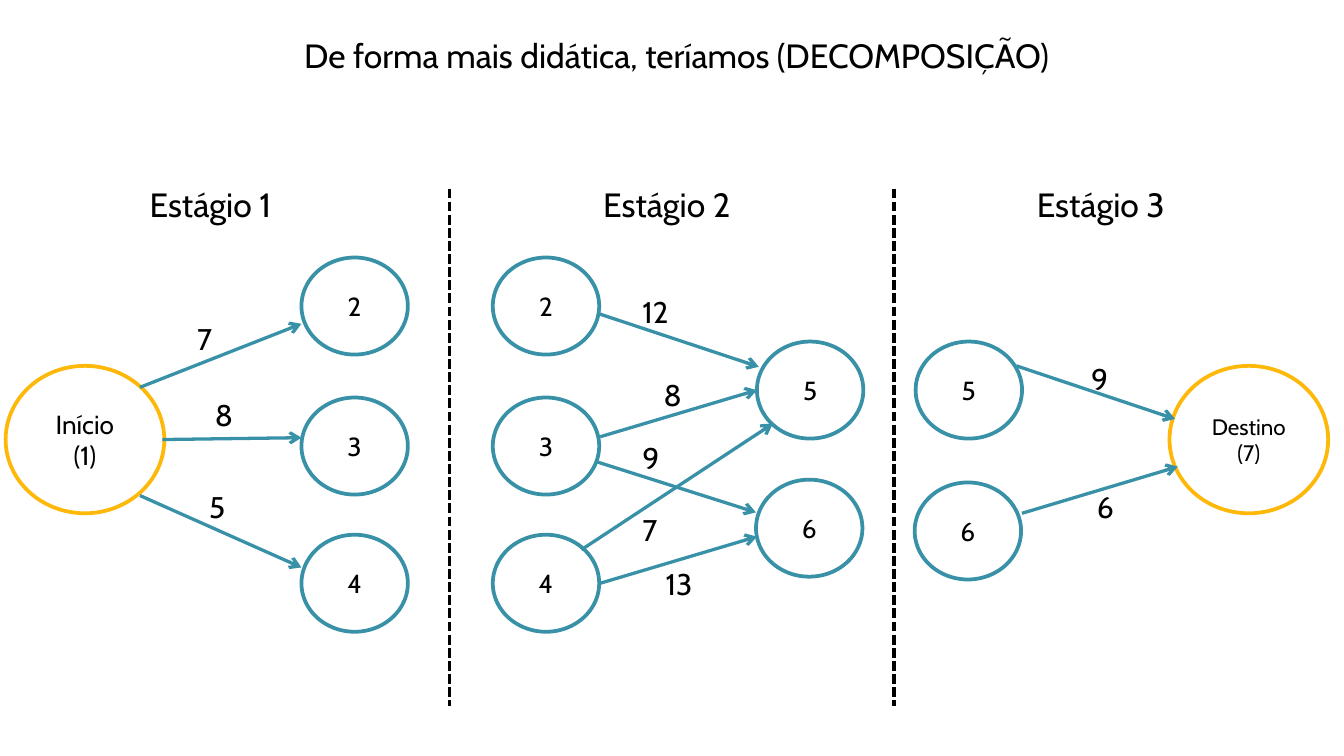
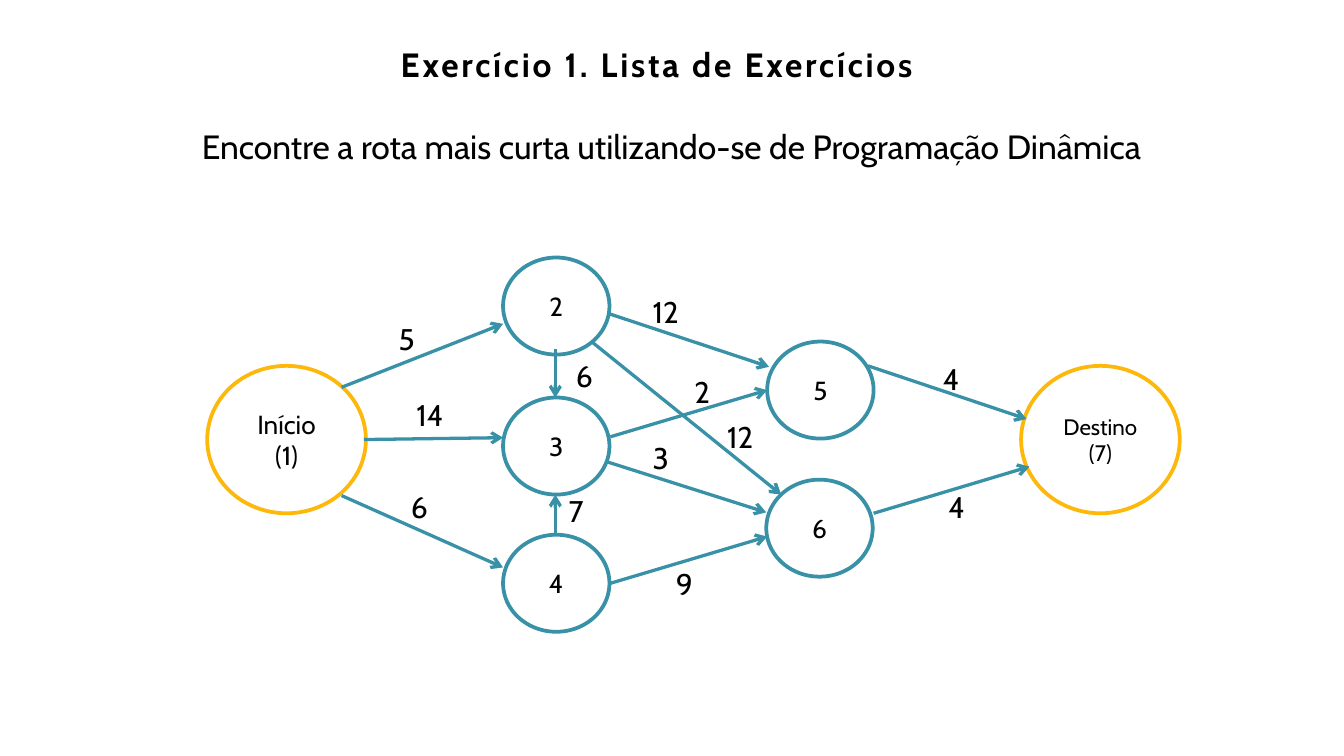
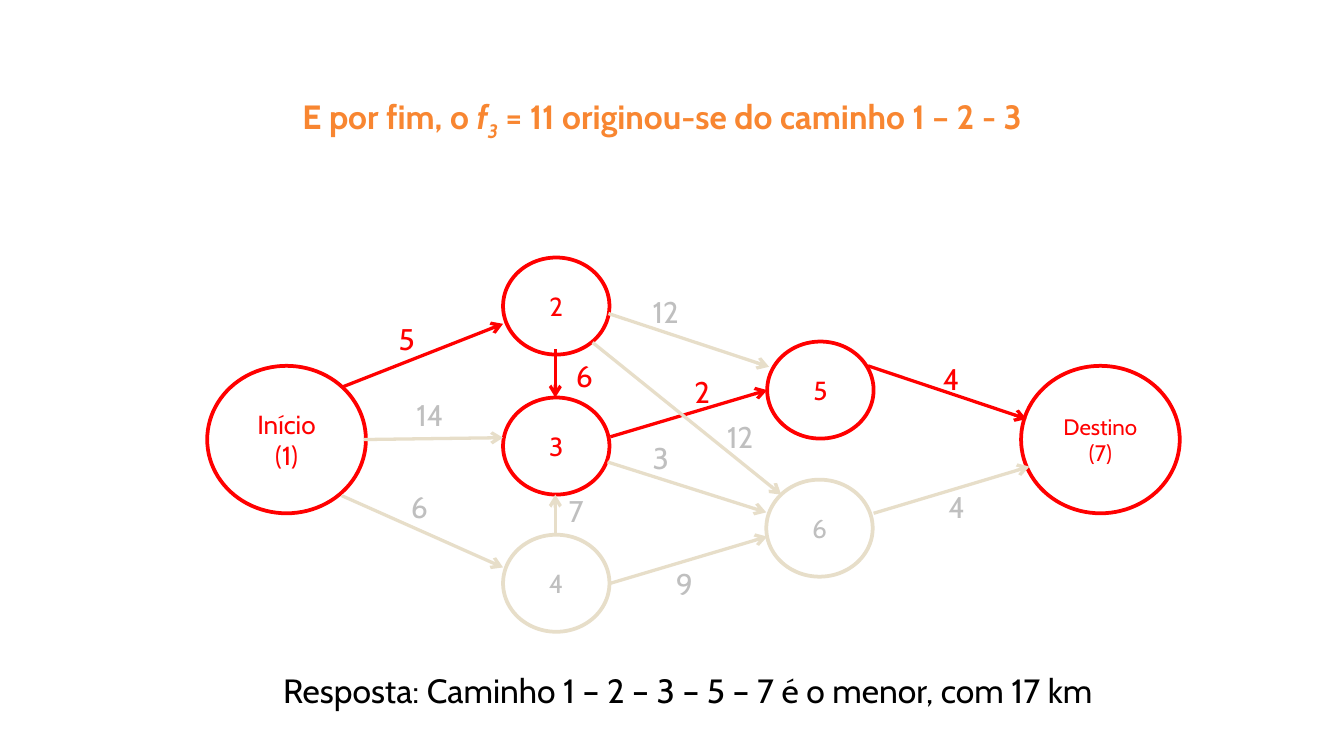
"""Build three slides on the shortest route by dynamic programming."""
from dataclasses import dataclass, replace
from typing import Iterable, NamedTuple

from lxml.etree import SubElement
from pptx import Presentation
from pptx.dml.color import RGBColor
from pptx.enum.dml import MSO_LINE
from pptx.enum.shapes import MSO_CONNECTOR, MSO_SHAPE
from pptx.enum.text import MSO_ANCHOR, MSO_AUTO_SIZE, PP_ALIGN
from pptx.oxml.ns import qn
from pptx.util import Pt


@dataclass(frozen=True)
class Theme:
    font: str = "Cabin"
    ink: str = "000000"
    terminal: str = "FEB80A"
    node: str = "3891A7"
    route: str = "FF0000"
    muted_line: str = "E7DEC9"
    muted_text: str = "BFBFBF"
    accent: str = "F88631"
    heading: float = 18
    weight: float = 16
    label: float = 14
    small_label: float = 12
    outline: float = 2
    stroke: float = 1.75


class Box(NamedTuple):
    x: float
    y: float
    w: float
    h: float = 29


@dataclass(frozen=True)
class Node:
    key: str
    x: float
    y: float
    w: float = 57
    h: float = 52
    text: str = ""
    size: float = Theme.label


@dataclass(frozen=True)
class Edge:
    key: str
    x1: float
    y1: float
    x2: float
    y2: float
    label_x: float
    label_y: float
    label_w: float = 19.5


class Stage(NamedTuple):
    dx: float
    nodes: list[Node]
    weights: dict[Edge, str]


T = Theme()

NODES = {n.key: n for n in (
    Node("1", 111, 196, 85, 79, "Início\n(1)"),
    Node("7", 547, 196, 85, 79, "Destino\n(7)", T.small_label),
    Node("2", 269.5, 138),
    Node("3", 269.5, 213),
    Node("4", 269.5, 286.5),
    Node("5", 411, 183),
    Node("6", 410.5, 257),
)}
TERMINALS = ("1", "7")

EDGES = {e.key: e for e in (
    Edge("12", 183, 207.5, 269.5, 173.5, 206.5, 168),
    Edge("13", 195, 235.5, 269.5, 234.5, 216, 209, 31),
    Edge("14", 183, 265.5, 269.5, 304, 213, 258),
    Edge("35", 327, 234, 411, 209, 365, 196.5),
    Edge("36", 325.5, 247.5, 410.5, 274.5, 342.5, 232),
    Edge("46", 327, 312.5, 411, 287.5, 355, 299.5, 39),
    Edge("25", 326, 168, 412, 196.5, 342.5, 154, 39),
    Edge("45", 317, 294.5, 419.5, 227, 342.5, 270.5),
    Edge("67", 468, 275, 551.5, 250, 501, 258.5),
    Edge("57", 465, 196, 550, 224.5, 498, 189.5),
    Edge("23", 297.5, 187, 297.5, 213, 301.5, 188),
    Edge("43", 297.5, 286.5, 297.5, 265, 297.5, 260.5),
    Edge("26", 317.5, 183.5, 418.5, 265, 382.5, 221, 39),
)}

STAGES = (
    Stage(-108, [NODES[k] for k in "1234"],
          {EDGES["12"]: "7", replace(EDGES["13"], label_w=19.5): "8",
           EDGES["14"]: "5"}),
    Stage(-5.5, [NODES[k] for k in "23456"],
          {replace(EDGES["35"], label_x=354, label_y=198): "8",
           EDGES["36"]: "9", EDGES["46"]: "13", EDGES["25"]: "12",
           EDGES["45"]: "7"}),
    Stage(79.5, [NODES["7"], NODES["5"], replace(NODES["6"], y=258.5)],
          {EDGES["67"]: "6", EDGES["57"]: "9"}),
)
STAGE_HEADING_X = (25, 269.5, 502)
DIVIDER_X = (241, 479)

EXERCISE = Stage(0, list(NODES.values()), {EDGES[k]: w for k, w in {
    "12": "5", "13": "14", "14": "6", "35": "2", "36": "3", "46": "9",
    "25": "12", "67": "4", "57": "4", "23": "6", "43": "7", "26": "12",
}.items()})


def rgb(color: str) -> RGBColor:
    """Turn a hex code into a colour."""
    return RGBColor.from_string(color)


def add_run(p, text: str, *, size: float = T.heading, color: str = T.ink,
            bold: bool = False, italic: bool = False, spacing: float = 0,
            baseline: int = 0) -> None:
    """Append a formatted run to a paragraph."""
    r = p.add_run()
    r.text = text
    r.font.name, r.font.size = T.font, Pt(size)
    r.font.bold, r.font.italic = bold, italic
    r.font.color.rgb = rgb(color)
    rpr = r._r.get_or_add_rPr()
    if spacing:
        rpr.set("spc", str(int(spacing * 100)))
    if baseline:
        rpr.set("baseline", str(baseline * 1000))


def write(tf, text: str, *, align=PP_ALIGN.CENTER, **fmt) -> None:
    """Write one paragraph for each line of text."""
    tf.word_wrap = True
    for i, line in enumerate(text.split("\n")):
        p = tf.add_paragraph() if i else tf.paragraphs[0]
        p.alignment = align
        add_run(p, line, **fmt)


def add_text(s, box: Box, text: str, **fmt) -> None:
    """Add a text box that grows with its text."""
    tf = s.shapes.add_textbox(*map(Pt, box)).text_frame
    tf.auto_size = MSO_AUTO_SIZE.SHAPE_TO_FIT_TEXT
    write(tf, text, **fmt)


def set_title(s, box: Box, text: str, **fmt):
    """Place and fill the title, and return its paragraph."""
    sp = s.shapes.title
    sp.left, sp.top, sp.width, sp.height = map(Pt, box)
    tf = sp.text_frame
    tf.vertical_anchor = MSO_ANCHOR.TOP
    tf.auto_size = MSO_AUTO_SIZE.SHAPE_TO_FIT_TEXT
    write(tf, text, **fmt)
    return tf.paragraphs[0]


def add_line(s, x1: float, y1: float, x2: float, y2: float, *,
             color: str, arrow: bool = False, dashed: bool = False) -> None:
    """Draw a straight line, with an arrowhead or dashes on request."""
    cx = s.shapes.add_connector(MSO_CONNECTOR.STRAIGHT, *map(Pt, (x1, y1, x2, y2)))
    cx.line.color.rgb = rgb(color)
    cx.line.width = Pt(T.stroke)
    if dashed:
        cx.line.dash_style = MSO_LINE.SQUARE_DOT
    sppr = cx._element.spPr
    if arrow:
        SubElement(sppr.find(qn("a:ln")), qn("a:tailEnd"), type="arrow")
    SubElement(sppr, qn("a:effectLst"))


def add_node(s, node: Node, dx: float, *, line: str, text: str) -> None:
    """Draw one node as an outlined ellipse."""
    box = Box(node.x + dx, node.y, node.w, node.h)
    sp = s.shapes.add_shape(MSO_SHAPE.OVAL, *map(Pt, box))
    sp.shadow.inherit = False
    sp.fill.background()
    sp.line.color.rgb = rgb(line)
    sp.line.width = Pt(T.outline)
    sp.text_frame.vertical_anchor = MSO_ANCHOR.MIDDLE
    write(sp.text_frame, node.text or node.key, size=node.size, color=text)


def colors(key: str, route: str, plain: str) -> tuple[str, str]:
    """Give the line and text colours of a node or an edge."""
    if not route:
        return plain, T.ink
    if key in route:
        return T.route, T.route
    return T.muted_line, T.muted_text


def draw_stage(s, stage: Stage, route: str = "") -> None:
    """Draw nodes, arrows and weights, with the route in red if given."""
    dx = stage.dx
    for node in stage.nodes:
        plain = T.terminal if node.key in TERMINALS else T.node
        line, text = colors(node.key, route, plain)
        add_node(s, node, dx, line=line, text=text)
    for e in stage.weights:
        line, _ = colors(e.key, route, T.node)
        add_line(s, e.x1 + dx, e.y1, e.x2 + dx, e.y2, color=line, arrow=True)
    for e, weight in stage.weights.items():
        _, text = colors(e.key, route, T.node)
        add_text(s, Box(e.label_x + dx, e.label_y, e.label_w, 26.5), weight,
                 size=T.weight, color=text, align=PP_ALIGN.LEFT)


def decomposition(s, stages: Iterable[Stage]) -> None:
    """Show the network split into stages."""
    set_title(s, Box(67.5, 15, 590), "De forma mais didática, teríamos (DECOMPOSIÇÃO)")
    for i, (stage, x) in enumerate(zip(stages, STAGE_HEADING_X), 1):
        draw_stage(s, stage)
        add_text(s, Box(x, 95, 175.5), f"Estágio {i}")
    for x in DIVIDER_X:
        add_line(s, x, 101, x, 378, color=T.ink, dashed=True)


def exercise(s) -> None:
    """State the exercise."""
    set_title(s, Box(57, 20, 590), "Exercício 1. Lista de Exercícios",
              bold=True, spacing=1.5)
    add_text(s, Box(31, 64, 657.5),
             "Encontre a rota mais curta utilizando-se de Programação Dinâmica")
    draw_stage(s, EXERCISE)


def answer(s) -> None:
    """Mark the shortest route."""
    fmt = {"color": T.accent, "bold": True}
    p = set_title(s, Box(99.5, 48, 510.5), "E por fim, o ", **fmt)
    add_run(p, "f", italic=True, **fmt)
    add_run(p, "3", italic=True, baseline=-25, **fmt)
    add_run(p, " = 11 originou-se do caminho 1 – 2 - 3", **fmt)
    draw_stage(s, EXERCISE, route="12357")
    add_text(s, Box(93.5, 355.5, 550),
             "Resposta: Caminho 1 – 2 – 3 – 5 – 7 é o menor, com 17 km")


def main() -> None:
    """Build and save the presentation."""
    prs = Presentation()
    prs.slide_width, prs.slide_height = Pt(720), Pt(405)
    title_only = prs.slide_layouts[5]
    decomposition(prs.slides.add_slide(title_only), STAGES)
    exercise(prs.slides.add_slide(title_only))
    answer(prs.slides.add_slide(title_only))
    prs.save("out.pptx")


if __name__ == "__main__":
    main()
